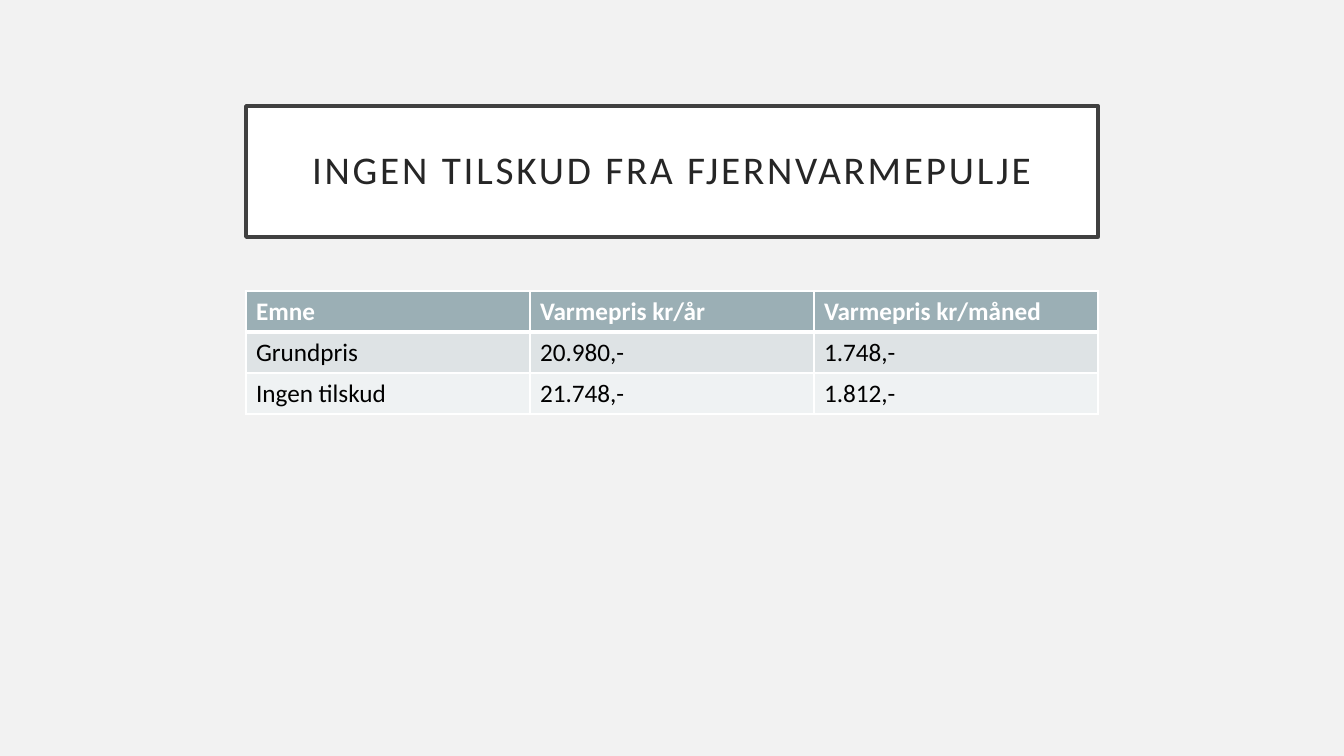
from lxml.etree import SubElement
from pptx import Presentation
from pptx.dml.color import RGBColor
from pptx.enum.text import MSO_ANCHOR as Anchor, MSO_AUTO_SIZE as AutoSize, PP_ALIGN as Align
from pptx.oxml.ns import qn
from pptx.util import Emu, Pt

COLORS = {
    "background": "F2F2F2",
    "white": "FFFFFF",
    "frame": "404040",
    "title": "262626",
    "text": "000000",
    "header": "9BAFB5",
    "band_dark": "DEE3E5",
    "band_light": "EFF2F3",
}
FONT = "Calibri"
EMU_PER_PX = 914400 / 100.8


def px(n):
    return Emu(round(n * EMU_PER_PX))


def rgb(name):
    return RGBColor.from_string(COLORS[name])


class SlideBuilder:
    """Holds the style and the current slide."""

    def __init__(self, prs):
        self.s = prs.slides.add_slide(prs.slide_layouts[5])
        fill = self.s.background.fill
        fill.solid()
        fill.fore_color.rgb = rgb("background")

    def style(self, p, size, color, bold=False):
        font = p.font
        font.name, font.size, font.bold = FONT, Pt(size), bold
        font.color.rgb = rgb(color)

    def title(self, text, x, y, w, h):
        sp = self.s.shapes.title
        sp.left, sp.top, sp.width, sp.height = px(x), px(y), px(w), px(h)
        sp.fill.solid()
        sp.fill.fore_color.rgb = rgb("white")
        sp.line.color.rgb = rgb("frame")
        sp.line.width = Pt(2.5)
        tf = sp.text_frame
        tf.text = text
        tf.word_wrap = True
        tf.auto_size = AutoSize.NONE
        tf.vertical_anchor = Anchor.MIDDLE
        tf.margin_left = tf.margin_right = tf.margin_top = tf.margin_bottom = px(20)
        p = tf.paragraphs[0]
        p.alignment = Align.CENTER
        p.line_spacing = 0.9
        self.style(p, 28, "title")
        # Letter spacing in hundredths of a point
        p.runs[0].font._element.set("spc", "200")

    def borders(self, cell, widths):
        """Draw white cell borders; widths maps a side (L, R, T, B) to points."""
        tc_pr = cell._tc.get_or_add_tcPr()
        for side, width in widths.items():
            ln = SubElement(tc_pr, qn(f"a:ln{side}"), w=str(Pt(width)))
            fill = SubElement(ln, qn("a:solidFill"))
            SubElement(fill, qn("a:srgbClr"), val=COLORS["white"])

    def table(self, rows, x, y, w, row_h):
        frame = self.s.shapes.add_table(
            len(rows), len(rows[0]), px(x), px(y), px(w), px(row_h * len(rows)))
        table = frame.table
        for i, row in enumerate(rows):
            table.rows[i].height = px(row_h)
            header = i == 0
            band = "header" if header else "band_dark" if i % 2 else "band_light"
            sides = {"L": 1, "R": 1, "T": 1, "B": 3} if header else {"L": 1, "R": 1, "B": 1}
            for j, text in enumerate(row):
                cell = table.cell(i, j)
                cell.text = text
                self.style(cell.text_frame.paragraphs[0], 18,
                           "white" if header else "text", header)
                # Borders come before the fill in the cell properties
                self.borders(cell, sides)
                cell.fill.solid()
                cell.fill.fore_color.rgb = rgb(band)


def main():
    prs = Presentation()
    prs.slide_width, prs.slide_height = px(1344), px(756)
    slide = SlideBuilder(prs)

    # Title
    slide.title("INGEN TILSKUD FRA FJERNVARMEPULJE", 246, 106, 852, 131)

    # Heat prices
    slide.table([
        ["Emne", "Varmepris kr/år", "Varmepris kr/måned"],
        ["Grundpris", "20.980,-", "1.748,-"],
        ["Ingen tilskud", "21.748,-", "1.812,-"],
    ], 246, 291, 852, 41)

    prs.save("out.pptx")


if __name__ == "__main__":
    main()
